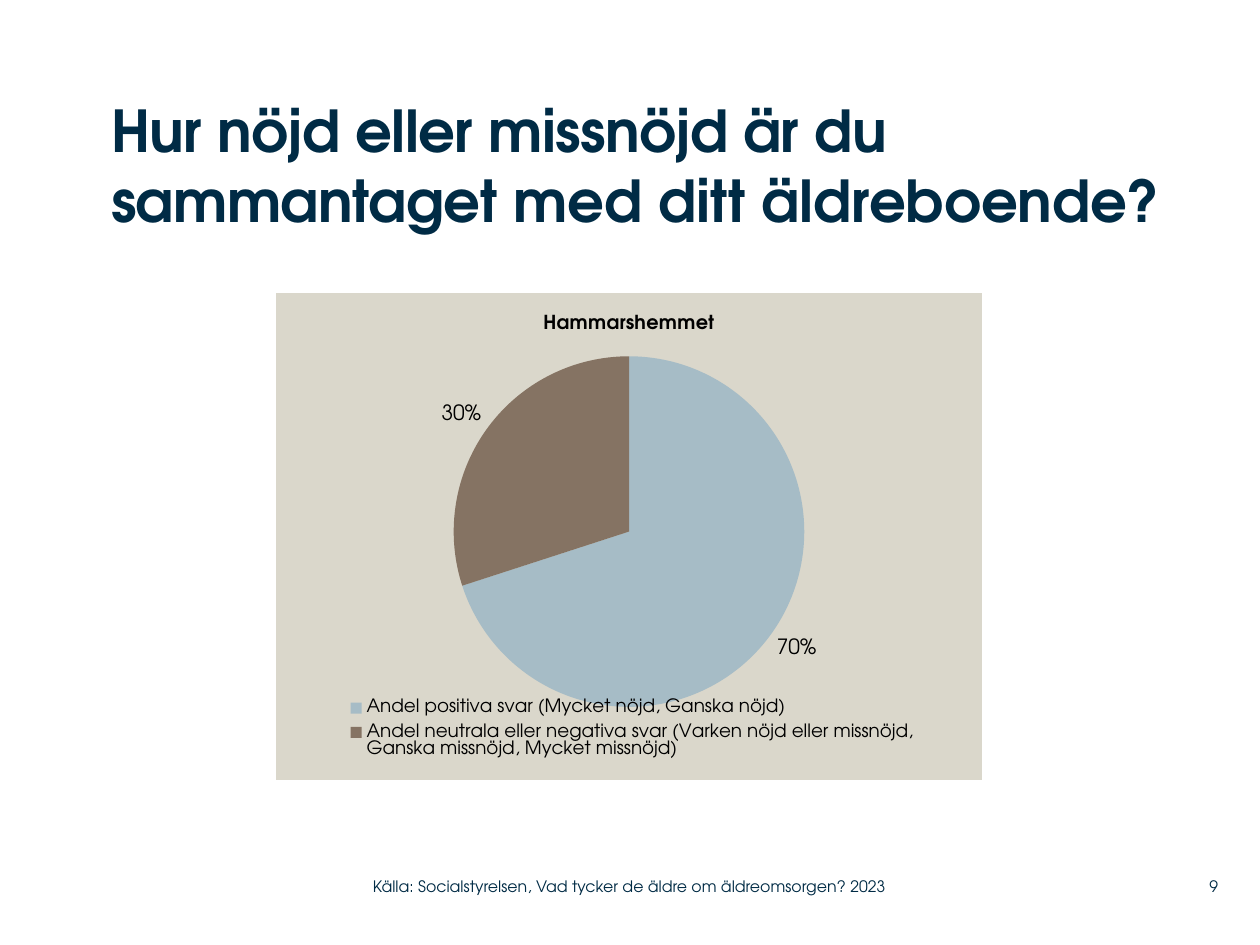
from lxml import etree
from pptx import Presentation
from pptx import util as u
from pptx.chart.data import CategoryChartData
from pptx.dml.color import RGBColor
from pptx.enum import chart as ch
from pptx.enum import text
from pptx.oxml import parse_xml
from pptx.oxml.ns import nsdecls, qn

PX = 914400 / 126
FONT = "TeX Gyre Adventor"
COLOURS = {"navy": "002B45", "black": "000000", "panel": "DAD7CB",
           "positive": "A6BCC6", "negative": "857363"}


def px(length):
    return u.Emu(round(length * PX))


def colour(name):
    return RGBColor.from_string(COLOURS[name])


def style(font, size, name, bold=False):
    font.name = FONT
    font.size = u.Pt(size)
    font.bold = bold
    font.color.rgb = colour(name)


def place(shape, left, top, width, height):
    shape.left, shape.top = px(left), px(top)
    shape.width, shape.height = px(width), px(height)


def prepare_frame(frame, anchor):
    frame.word_wrap = True
    frame.auto_size = text.MSO_AUTO_SIZE.NONE
    frame.vertical_anchor = anchor
    frame.margin_left = frame.margin_top = 0
    frame.margin_right = frame.margin_bottom = 0


def add_title(page, spans):
    """Fill the title placeholder from (text, letter spacing) pairs."""
    title = page.shapes.title
    place(title, 111, 95, 1113, 179)
    prepare_frame(title.text_frame, text.MSO_ANCHOR.TOP)
    para = title.text_frame.paragraphs[0]
    para.alignment = text.PP_ALIGN.LEFT
    for words, spacing in spans:
        span = para.add_run()
        span.text = words
        style(span.font, 33, "navy", bold=True)
        span.font._element.set("spc", str(spacing))


def add_note(page, words, left, width, alignment):
    box = page.shapes.add_textbox(px(left), px(868), px(width), px(37))
    prepare_frame(box.text_frame, text.MSO_ANCHOR.MIDDLE)
    para = box.text_frame.paragraphs[0]
    para.text = words
    para.alignment = alignment
    style(para.runs[0].font, 9, "navy")


def set_layout(element, index, left, top, width, height, inner=False):
    """Fix the place of a chart part, in fractions of the chart."""
    for old in element.findall(qn("c:layout")):
        element.remove(old)
    layout = etree.Element(qn("c:layout"))
    manual = etree.SubElement(layout, qn("c:manualLayout"))
    values = [("xMode", "edge"), ("yMode", "edge"), ("x", left),
              ("y", top), ("w", width), ("h", height)]
    if inner:
        values.insert(0, ("layoutTarget", "inner"))
    for tag, value in values:
        etree.SubElement(manual, qn(f"c:{tag}")).set("val", str(value))
    element.insert(index, layout)


def fill_background(chart, name):
    area = parse_xml(
        f'<c:spPr {nsdecls("c", "a")}><a:solidFill><a:srgbClr val="{COLOURS[name]}"/>'
        '</a:solidFill><a:ln><a:noFill/></a:ln></c:spPr>')
    chart._chartSpace.find(qn("c:chart")).addnext(area)


def add_pie(page, name, slices):
    """Draw a pie from (category, value, colour name) rows."""
    data = CategoryChartData()
    data.categories = [label for label, _, _ in slices]
    data.add_series(name, [value for _, value, _ in slices])
    chart = page.shapes.add_chart(ch.XL_CHART_TYPE.PIE, px(276), px(293),
                                  px(706), px(487), data).chart
    style(chart.font, 18, "black")
    fill_background(chart, "panel")

    chart.has_title = True
    chart.chart_title.include_in_layout = False
    para = chart.chart_title.text_frame.paragraphs[0]
    para.text = name
    style(para.runs[0].font, 11, "black", bold=True)

    chart.has_legend = True
    chart.legend.position = ch.XL_LEGEND_POSITION.BOTTOM
    chart.legend.include_in_layout = False
    style(chart.legend.font, 10.5, "black")

    plot = chart.plots[0]
    plot.vary_by_categories = True
    for index, (_, _, fill_name) in enumerate(slices):
        point = plot.series[0].points[index]
        point.format.fill.solid()
        point.format.fill.fore_color.rgb = colour(fill_name)
        point.format.line.fill.background()

    labels = plot.series[0].data_labels
    labels.show_value = False
    labels.show_percentage = True
    labels.number_format = "0%"
    labels.number_format_is_linked = False
    labels.position = ch.XL_LABEL_POSITION.OUTSIDE_END
    style(labels.font, 12, "black")

    plot_area = chart._chartSpace.find(".//" + qn("c:plotArea"))
    set_layout(plot_area, 0, 0.25, 0.13, 0.5, 0.72, inner=True)
    set_layout(chart.legend._element, 1, 0.09, 0.82, 0.83, 0.15)


def main():
    deck = Presentation()
    deck.slide_width, deck.slide_height = px(1260), px(945)
    page = deck.slides.add_slide(deck.slide_layouts[5])
    add_title(page, [("Hur nöjd eller missnöjd är du sammantaget ", -30),
                     ("med ditt äldreboende?", 0)])
    add_pie(page, "Hammarshemmet", [
        ("Andel positiva svar (Mycket nöjd, Ganska nöjd)", 70, "positive"),
        ("Andel neutrala eller negativa svar (Varken nöjd eller missnöjd, "
         "Ganska missnöjd, Mycket missnöjd)", 30, "negative"),
    ])
    add_note(page, "Källa: Socialstyrelsen, Vad tycker de äldre om äldreomsorgen? 2023",
             373, 558, text.PP_ALIGN.LEFT)
    add_note(page, "9", 1159, 59, text.PP_ALIGN.RIGHT)
    deck.save("out.pptx")


if __name__ == "__main__":
    main()
